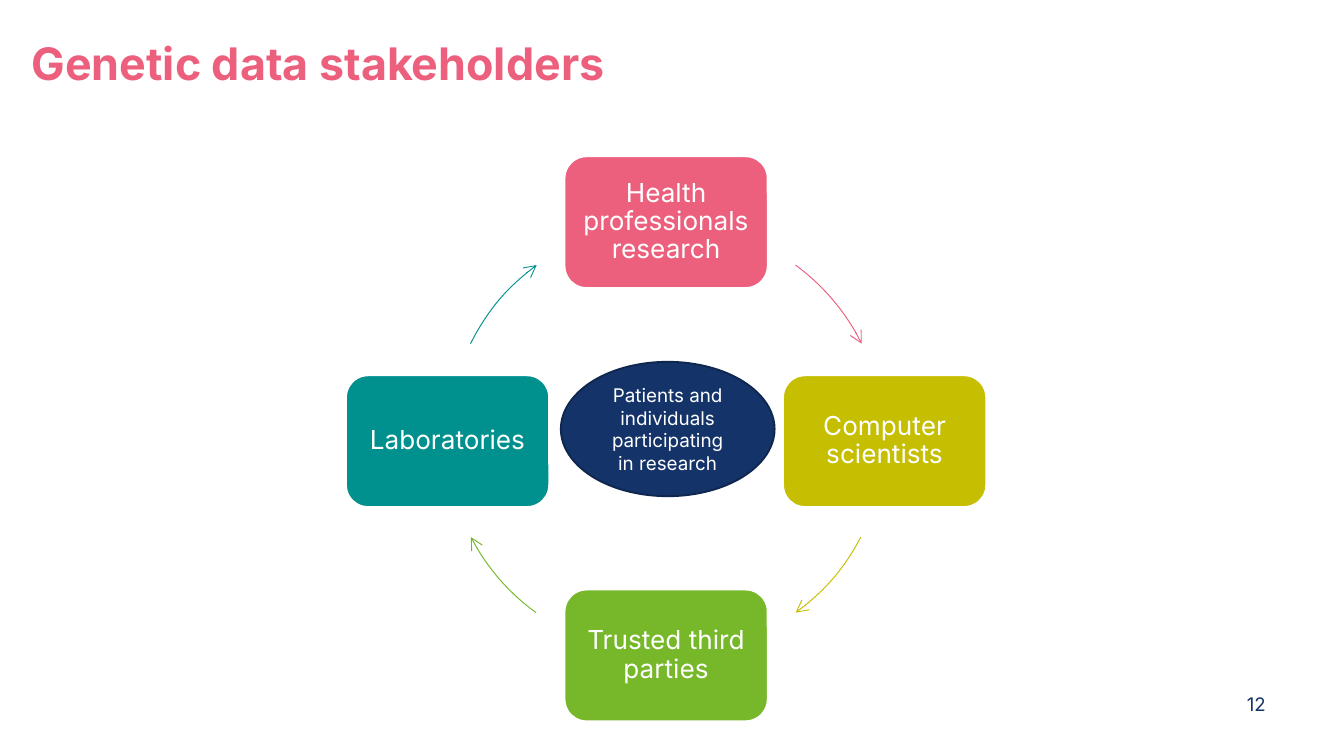
from dataclasses import dataclass

from lxml.etree import SubElement
from pptx import Presentation
from pptx.dml.color import RGBColor
from pptx.enum.shapes import MSO_SHAPE as Shape
from pptx.enum.text import MSO_ANCHOR as Anchor, PP_ALIGN as Align
from pptx.oxml.ns import qn
from pptx.util import Cm, Pt


@dataclass(frozen=True)
class Theme:
    font: str = "Inter"
    pink: str = "EC607E"
    olive: str = "C5BE01"
    green: str = "76B82A"
    teal: str = "00918E"
    navy: str = "143369"
    dark_navy: str = "0F264E"
    white: str = "FFFFFF"
    title_size: float = 24
    card_size: float = 14
    center_size: float = 10.1
    number_size: float = 10


theme = Theme()


def write(box, text, *, size, color, bold=False, align=Align.LEFT,
          anchor=Anchor.TOP, inset=(0, 0), spacing=1.0):
    """Fill a shape or text box with one formatted paragraph."""
    frame = box.text_frame
    frame.word_wrap = True
    frame.vertical_anchor = anchor
    frame.margin_left = frame.margin_right = Cm(inset[0])
    frame.margin_top = frame.margin_bottom = Cm(inset[1])
    para = frame.paragraphs[0]
    para.alignment = align
    para.line_spacing = spacing
    span = para.add_run()
    span.text = text
    span.font.name = theme.font
    span.font.size = Pt(size)
    span.font.bold = bold
    span.font.color.rgb = RGBColor.from_string(color)


def add_shape(kind, left, top, width, height, *, fill, line, weight):
    """Add a preset shape, measured in centimetres."""
    shape = page.shapes.add_shape(kind, Cm(left), Cm(top), Cm(width), Cm(height))
    shape.shadow.inherit = False
    if fill:
        shape.fill.solid()
        shape.fill.fore_color.rgb = RGBColor.from_string(fill)
    else:
        shape.fill.background()
    shape.line.color.rgb = RGBColor.from_string(line)
    shape.line.width = Pt(weight)
    return shape


deck = Presentation()
deck.slide_width, deck.slide_height = Cm(25.4), Cm(14.29)
page = deck.slides.add_slide(deck.slide_layouts[6])

# Title
title = page.shapes.add_textbox(Cm(0.6), Cm(0.67), Cm(17.15), Cm(1.02))
write(title, "Genetic data stakeholders", size=theme.title_size,
      color=theme.pink, bold=True)

# Stakeholder cycle, clockwise from the top:
# text, colour, card centre y, columns from the middle, arc centre, arc angles
center_x, column_step = 12.59, 4.13
card_width, card_height = 3.84, 2.49
diameter = 8.26
stakeholders = [
    ("Health professionals research", theme.pink, 4.2, 0, (12.59, 8.34), (306.3, 333.5)),
    ("Computer scientists", theme.olive, 8.34, 1, (12.61, 8.24), (27.6, 54)),
    ("Trusted third parties", theme.green, 12.39, 0, (12.56, 8.24), (126, 152.4)),
    ("Laboratories", theme.teal, 8.34, -1, (12.59, 8.34), (206.5, 233.7)),
]
for text, color, center_y, column, (arc_x, arc_y), angles in stakeholders:
    card = add_shape(Shape.ROUNDED_RECTANGLE,
                     center_x + column * column_step - card_width / 2,
                     center_y - card_height / 2, card_width, card_height,
                     fill=color, line=theme.white, weight=1)
    # The rounded corners already add to this inset
    write(card, text, size=theme.card_size, color=theme.white,
          align=Align.CENTER, anchor=Anchor.MIDDLE, inset=(0.15, 0.15), spacing=0.9)

    # Curved arrow to the next stakeholder
    arc = add_shape(Shape.ARC, arc_x - diameter / 2, arc_y - diameter / 2,
                    diameter, diameter, fill=None, line=color, weight=0.5)
    for index, angle in enumerate(angles):
        arc.adjustments[index] = angle * 0.6  # 60000 units a degree, scaled by 100000
    outline = arc.element.spPr.find(qn("a:ln"))
    SubElement(outline, qn("a:tailEnd"), type="arrow")

# Page number
number = page.shapes.add_textbox(Cm(21.86), Cm(13.09), Cm(2.06), Cm(1.19))
write(number, "12", size=theme.number_size, color=theme.navy, align=Align.RIGHT)

# Patients at the centre
patients = add_shape(Shape.OVAL, 10.6, 6.84, 4.04, 2.54,
                     fill=theme.navy, line=theme.dark_navy, weight=1)
write(patients, "Patients and individuals participating in research",
      size=theme.center_size, color=theme.white, align=Align.CENTER,
      anchor=Anchor.MIDDLE, inset=(0.25, 0.13))

deck.save("out.pptx")
